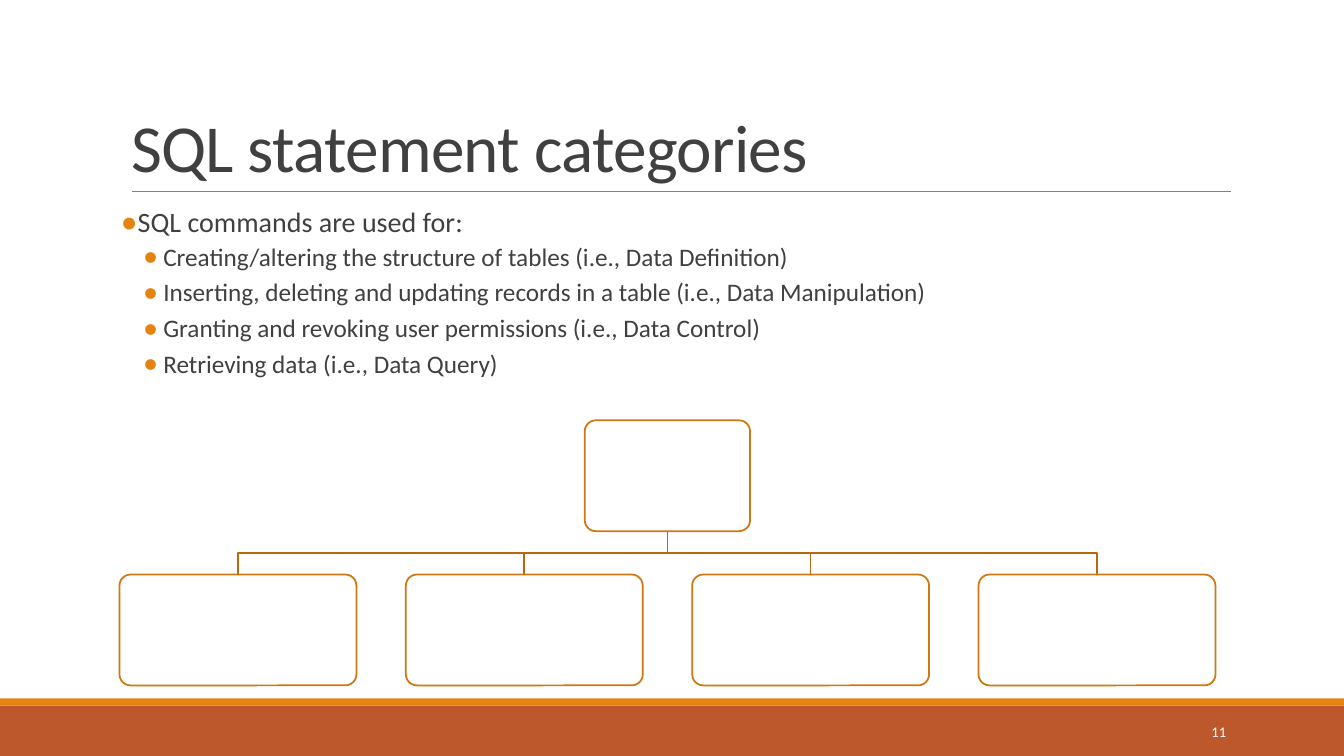
from lxml import etree
from pptx import Presentation
from pptx import util as u
from pptx.dml.color import RGBColor
from pptx.enum import shapes, text
from pptx.oxml.ns import qn

COLORS = {
    "white": "FFFFFF", "ink": "404040", "rule": "808080", "footer": "BD582C",
    "accent": "E48312", "box_line": "CF7710", "branch": "B7690E",
}


class SlideBuilder:
    font_name = "Calibri"

    def __init__(self, slide):
        self.slide = slide

    def apply(self, target, values):
        for name, value in values.items():
            setattr(target, name, value)

    def color(self, name):
        return RGBColor.from_string(COLORS[name])

    def style(self, shape, fill=None, line=None):
        shape.shadow.inherit = False
        if fill:
            shape.fill.solid()
            shape.fill.fore_color.rgb = self.color(fill)
        else:
            shape.fill.background()
        if line:
            shape.line.color.rgb = self.color(line)
            shape.line.width = u.Pt(1.25)
        else:
            shape.line.fill.background()

    def box(self, left, top, width, height, fill, line=None, radius=None):
        kind = shapes.MSO_SHAPE.ROUNDED_RECTANGLE if radius else shapes.MSO_SHAPE.RECTANGLE
        shape = self.slide.shapes.add_shape(kind, *map(u.Inches, (left, top, width, height)))
        if radius:
            shape.adjustments[0] = radius
        self.style(shape, fill, line)

    def rule(self, left, right, y):
        line = self.slide.shapes.add_connector(
            shapes.MSO_CONNECTOR.STRAIGHT, *map(u.Inches, (left, y, right, y)))
        line.line.color.rgb = self.color("rule")
        line.line.width = u.Pt(0.5)
        etree.SubElement(line._element.spPr, qn("a:effectLst"))

    def branch(self, points):
        start, *rest = [(u.Inches(x), u.Inches(y)) for x, y in points]
        builder = self.slide.shapes.build_freeform(*start)
        builder.add_line_segments(rest, close=False)
        self.style(builder.convert_to_shape(), line="branch")

    def add_words(self, paragraph, words, size, color="ink", spacing=None, **formats):
        run = paragraph.add_run()
        run.text = words
        self.apply(run.font, {"name": self.font_name, "size": u.Pt(size)})
        run.font.color.rgb = self.color(color)
        if spacing:
            run._r.get_or_add_rPr().set("spc", str(spacing))
        self.apply(paragraph, formats)

    def frame(self, shape, left, top, width, height, **formats):
        self.apply(shape, dict(zip(("left", "top", "width", "height"),
                                   map(u.Inches, (left, top, width, height)))))
        self.apply(shape.text_frame, {"word_wrap": True, **formats})
        return shape.text_frame

    def text_box(self, left, top, width, height, **formats):
        shape = self.slide.shapes.add_textbox(0, 0, 0, 0)
        return self.frame(shape, left, top, width, height, **formats)

    def title(self, words):
        frame = self.frame(self.slide.shapes.title, 1.2, 0.31, 11, 1.59,
                           vertical_anchor=text.MSO_ANCHOR.BOTTOM,
                           auto_size=text.MSO_AUTO_SIZE.NONE)
        self.add_words(frame.paragraphs[0], words, 48, spacing=-50,
                       alignment=text.PP_ALIGN.LEFT, line_spacing=0.85)

    def bullet(self, paragraph, margin):
        properties = paragraph._p.get_or_add_pPr()
        properties.set("marL", str(u.Inches(margin)))
        properties.set("indent", str(u.Inches(-0.2)))
        color = etree.SubElement(properties, qn("a:buClr"))
        etree.SubElement(color, qn("a:srgbClr"), val=COLORS["accent"])
        etree.SubElement(properties, qn("a:buSzPct"), val="120000")
        etree.SubElement(properties, qn("a:buFont"), typeface=self.font_name)
        etree.SubElement(properties, qn("a:buChar"), char="•")

    def bullets(self, heading, items):
        frame = self.text_box(1.2, 2.02, 11, 4.4, margin_left=0, margin_right=0)
        paragraph = frame.paragraphs[0]
        self.add_words(paragraph, heading, 20, line_spacing=0.9,
                       space_before=u.Pt(12), space_after=u.Pt(2))
        self.bullet(paragraph, 0.1)
        for item in items:
            paragraph = frame.add_paragraph()
            self.add_words(paragraph, item, 18, level=1, line_spacing=0.9,
                           space_before=u.Pt(2), space_after=u.Pt(4))
            self.bullet(paragraph, 0.42)

    def tree(self, child_count):
        center, root_top, child_top, height = 6.62, 4.17, 5.7, 1.1
        root_width, child_width, pitch = 1.64, 2.35, 2.84
        root_bottom = root_top + height
        middle = (root_bottom + child_top) / 2
        look = {"fill": "white", "line": "box_line", "radius": 0.1}
        self.box(center - root_width / 2, root_top, root_width, height, **look)
        for index in range(child_count):
            x = center + (index - (child_count - 1) / 2) * pitch
            self.branch([(center, root_bottom), (center, middle), (x, middle), (x, child_top)])
            self.box(x - child_width / 2, child_top, child_width, height, **look)

    def page_number(self, number):
        frame = self.text_box(10.83, 7.06, 1.43, 0.4, vertical_anchor=text.MSO_ANCHOR.MIDDLE)
        self.add_words(frame.paragraphs[0], number, 10.5, "white",
                       alignment=text.PP_ALIGN.RIGHT)


def main():
    presentation = Presentation()
    presentation.slide_width = u.Inches(13.33)
    presentation.slide_height = u.Inches(7.5)
    builder = SlideBuilder(presentation.slides.add_slide(presentation.slide_layouts[5]))
    builder.box(0, 7, 13.33, 0.5, "footer")
    builder.box(0, 6.93, 13.33, 0.07, "accent")
    builder.rule(1.31, 12.21, 1.9)
    builder.title("SQL statement categories")
    builder.bullets("SQL commands are used for:", [
        "Creating/altering the structure of tables (i.e., Data Definition)",
        "Inserting, deleting and updating records in a table (i.e., Data Manipulation)",
        "Granting and revoking user permissions (i.e., Data Control)",
        "Retrieving data (i.e., Data Query)",
    ])
    builder.tree(4)
    builder.page_number("11")
    presentation.save("out.pptx")


if __name__ == "__main__":
    main()
